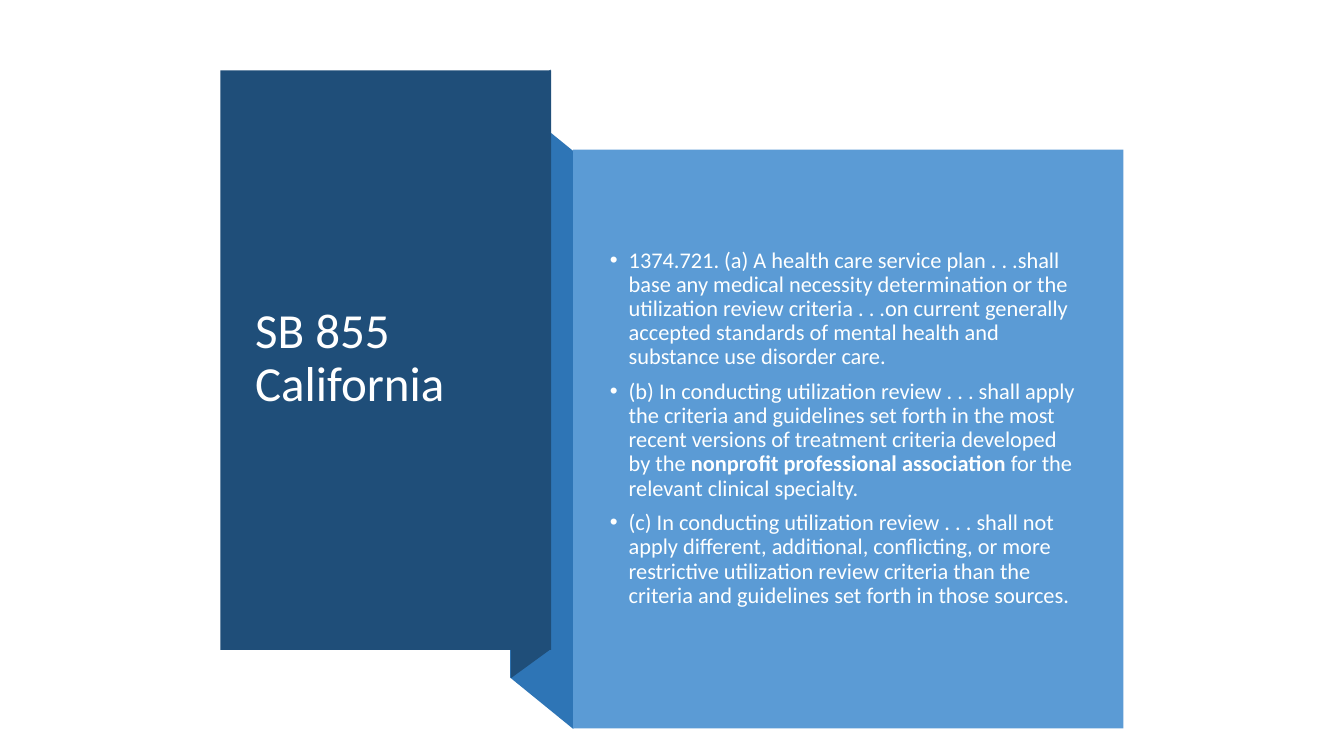
import dataclasses

import lxml.etree
import pptx
import pptx.dml.color
import pptx.enum.shapes
import pptx.enum.text
import pptx.oxml.ns
import pptx.util

Pt = pptx.util.Pt


@dataclasses.dataclass(frozen=True)
class Theme:
    font: str = "Calibri"
    dark: str = "1F4E79"
    mid: str = "2E75B6"
    light: str = "5B9BD5"
    white: str = "FFFFFF"
    soft: str = "FEFFFF"
    head: float = 35
    body: float = 16
    hang: float = 13.5
    gap: float = 7.5


def color(code):
    return pptx.dml.color.RGBColor.from_string(code)


def write(para, text, *, font, size, fill, bold=False):
    run = para.add_run()
    run.text = text
    run.font.name = font
    run.font.size = Pt(size)
    run.font.bold = bold
    run.font.color.rgb = color(fill)


class Page:
    def __init__(self, deck, theme):
        self.theme = theme
        self.slide = deck.slides.add_slide(deck.slide_layouts[1])
        self.shapes = self.slide.shapes

    def paint(self, shape, fill):
        shape.shadow.inherit = False
        shape.fill.solid()
        shape.fill.fore_color.rgb = color(fill)
        shape.line.fill.background()

    def panel(self, box, fill):
        kind = pptx.enum.shapes.MSO_SHAPE.RECTANGLE
        self.paint(self.shapes.add_shape(kind, *map(Pt, box)), fill)

    def fold(self, points, fill):
        start, *rest = [(Pt(x), Pt(y)) for x, y in points]
        form = self.shapes.build_freeform(*start)
        form.add_line_segments(rest, close=True)
        self.paint(form.convert_to_shape(), fill)

    def place(self, holder, box):
        self.shapes.element.append(holder.element)
        holder.left, holder.top, holder.width, holder.height = map(Pt, box)
        frame = holder.text_frame
        frame.word_wrap = True
        frame.auto_size = pptx.enum.text.MSO_AUTO_SIZE.NONE
        frame.vertical_anchor = pptx.enum.text.MSO_ANCHOR.MIDDLE
        return frame

    def line(self, para, gap=0):
        para.alignment = pptx.enum.text.PP_ALIGN.LEFT
        para.line_spacing = 0.9
        para.space_before = Pt(gap)

    def title(self, text, box):
        para = self.place(self.shapes.title, box).paragraphs[0]
        self.line(para)
        theme = self.theme
        write(para, text, font=theme.font, size=theme.head, fill=theme.white)

    def list(self, items, box):
        theme = self.theme
        frame = self.place(self.slide.placeholders[1], box)
        for index, parts in enumerate(items):
            para = frame.add_paragraph() if index else frame.paragraphs[0]
            self.line(para, theme.gap if index else 0)
            props = para._p.get_or_add_pPr()
            props.set("marL", str(Pt(theme.hang)))
            props.set("indent", str(-Pt(theme.hang)))
            tag = pptx.oxml.ns.qn
            lxml.etree.SubElement(props, tag("a:buFont")).set("typeface", "Arial")
            lxml.etree.SubElement(props, tag("a:buChar")).set("char", "•")
            for text, bold in parts:
                write(para, text, font=theme.font, size=theme.body,
                      fill=theme.soft, bold=bold)


def main():
    deck = pptx.Presentation()
    deck.slide_width, deck.slide_height = Pt(960), Pt(540)
    theme = Theme()
    page = Page(deck, theme)
    page.fold([(409.5, 520.7), (364.4, 484), (364.4, 71.2), (409.5, 107.9)], theme.mid)
    page.fold([(393.3, 463.8), (365, 484.4), (365, 70.6), (393.3, 49.8)], theme.dark)
    page.panel((157.5, 50.2, 236.2, 414), theme.dark)
    page.title("SB 855 California", (175, 77, 200.2, 359.3))
    page.panel((409.5, 106.8, 393, 413.5), theme.light)
    page.list([
        [("1374.721. (a) A health care service plan . . .shall base any medical "
          "necessity determination or the utilization review criteria . . .on "
          "current generally accepted standards of mental health and substance "
          "use disorder care.", False)],
        [("(b) In conducting utilization review . . . shall apply the criteria and "
          "guidelines set forth in the most recent versions of treatment criteria "
          "developed by the ", False),
         ("nonprofit professional association ", True),
         ("for the relevant clinical specialty.", False)],
        [("(c) In conducting utilization review . . . shall not apply different, "
          "additional, conflicting, or more restrictive utilization review criteria "
          "than the criteria and guidelines set forth in those sources.", False)],
    ], (428.4, 135.4, 351.4, 341.3))
    deck.save("out.pptx")


if __name__ == "__main__":
    main()
